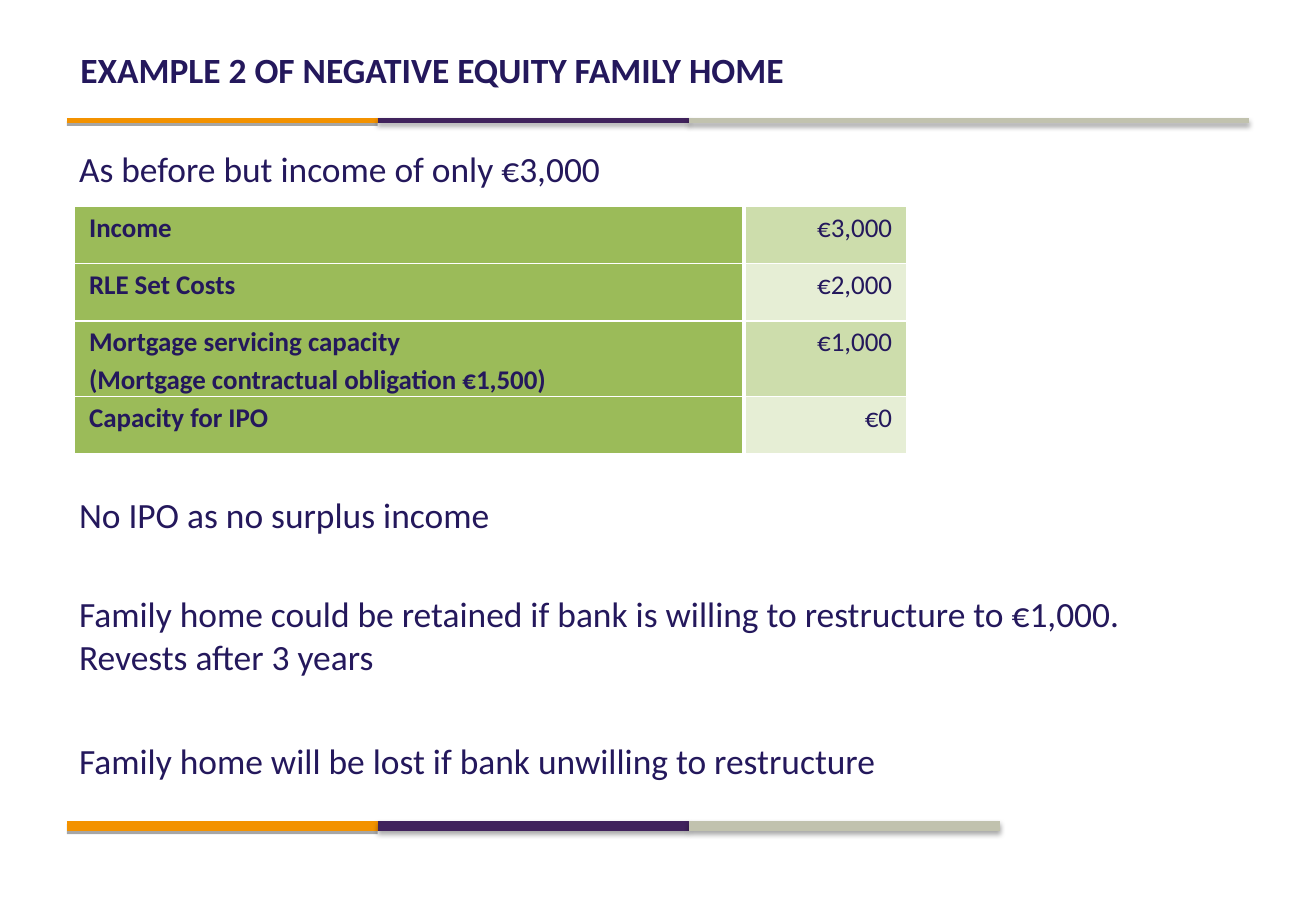
"""Build the slide on the second negative equity family home example."""
from lxml.etree import SubElement
from pptx import Presentation
from pptx.dml.color import RGBColor as Color
from pptx.enum.shapes import MSO_CONNECTOR as Connector
from pptx.enum.text import MSO_ANCHOR as Anchor, MSO_AUTO_SIZE as AutoSize, PP_ALIGN as Align
from pptx.oxml import parse_xml
from pptx.oxml.ns import qn
from pptx.util import Pt

COLORS = {"ink": "24185C", "orange": "F39200", "purple": "40225C", "stone": "C1C2AE",
          "green": "9BBB59", "mid": "CDDDAC", "pale": "E6EED5", "white": "FFFFFF"}
FONT = "Calibri"
TITLE = "EXAMPLE 2 OF NEGATIVE EQUITY FAMILY HOME"
BODY = [
    ("As before but income of only €3,000", 0),
    ("No IPO as no surplus income", 180),
    ("Family home could be retained if bank is willing to restructure to €1,000. "
     "Revests after 3 years", 33.6),
    ("Family home will be lost if bank unwilling to restructure", 36.4),
]
BUDGET = [
    (["Income"], "€3,000"),
    (["RLE Set Costs"], "€2,000"),
    (["Mortgage servicing capacity", "(Mortgage contractual obligation €1,500)"], "€1,000"),
    (["Capacity for IPO"], "€0"),
]
COLUMN_WIDTHS = (396.7, 96.5)
ROW_HEIGHTS = {1: 33.84, 2: 45}
RULE_COLORS = ("orange", "purple", "stone")
RULES = [(71.3, 3, (39.6, 223.9, 408.2, 740.2)),
         (489.6, 6, (39.6, 223.9, 408.2, 592.6))]
INSET = 8.64
A_NS = "http://schemas.openxmlformats.org/drawingml/2006/main"


def write(para, text, size=21, bold=False, align=Align.LEFT, before=0, spacing=None):
    """Put formatted text into a paragraph."""
    props = para._p.get_or_add_pPr()
    props.set("marL", "0")
    props.set("indent", "0")
    SubElement(props, qn("a:buNone"))
    para.alignment = align
    para.space_before = Pt(before)
    if spacing:
        para.line_spacing = spacing
    span = para.add_run()
    span.text = text
    span.font.name = FONT
    span.font.size = Pt(size)
    span.font.bold = bold
    span.font.color.rgb = Color.from_string(COLORS["ink"])


def place(box, left, top, width, height, anchor):
    """Position a placeholder and return its text frame."""
    box.left, box.top, box.width, box.height = map(Pt, (left, top, width, height))
    frame = box.text_frame
    frame.word_wrap = True
    frame.auto_size = AutoSize.NONE
    frame.vertical_anchor = anchor
    frame.margin_left = frame.margin_right = Pt(INSET)
    frame.margin_top = frame.margin_bottom = Pt(INSET / 2)
    return frame


def add_rule(slide, left, right, top, weight, color, blur):
    """Draw one coloured segment with a soft shadow below it."""
    rule = slide.shapes.add_connector(Connector.STRAIGHT, Pt(left), Pt(top), Pt(right), Pt(top))
    rule.line.color.rgb = Color.from_string(COLORS[color])
    rule.line.width = Pt(weight)
    rule._element.spPr.append(parse_xml(
        f'<a:effectLst xmlns:a="{A_NS}"><a:outerShdw blurRad="{Pt(blur)}" dist="{Pt(1.8)}" '
        'dir="5400000" rotWithShape="0"><a:srgbClr val="000000"><a:alpha val="35000"/>'
        '</a:srgbClr></a:outerShdw></a:effectLst>'))


def fill_cell(cell, lines, color, thick_side, **text_format):
    """Write a table cell with white borders and a solid fill."""
    props = cell._tc.get_or_add_tcPr()
    for side in "LRTB":
        weight = 3 if side == thick_side else 1
        border = SubElement(props, qn(f"a:ln{side}"), w=str(Pt(weight)))
        solid = SubElement(border, qn("a:solidFill"))
        SubElement(solid, qn("a:srgbClr"), val=COLORS["white"])
    cell.fill.solid()
    cell.fill.fore_color.rgb = Color.from_string(COLORS[color])
    cell.margin_left = cell.margin_right = Pt(INSET)
    cell.margin_top = cell.margin_bottom = 0
    frame = cell.text_frame
    for index, text in enumerate(lines):
        para = frame.add_paragraph() if index else frame.paragraphs[0]
        write(para, text, size=16, spacing=1.15, **text_format)


def add_budget(slide):
    """Add the income and costs table."""
    heights = [ROW_HEIGHTS[len(labels)] for labels, _ in BUDGET]
    table = slide.shapes.add_table(len(BUDGET), 2, Pt(44.2), Pt(122.5),
                                   Pt(sum(COLUMN_WIDTHS)), Pt(sum(heights))).table
    table.first_row = table.horz_banding = False
    for column, width in zip(table.columns, COLUMN_WIDTHS):
        column.width = Pt(width)
    for index, (labels, amount) in enumerate(BUDGET):
        table.rows[index].height = Pt(heights[index])
        fill_cell(table.cell(index, 0), labels, "green", "R", bold=True)
        fill_cell(table.cell(index, 1), [amount], ("mid", "pale")[index % 2], "L",
                  align=Align.RIGHT)


def main():
    """Assemble and save the deck."""
    deck = Presentation()
    deck.slide_width, deck.slide_height = Pt(780), Pt(540)
    slide = deck.slides.add_slide(deck.slide_layouts[1])
    for top, weight, stops in RULES:
        for index, color in enumerate(RULE_COLORS):
            add_rule(slide, stops[index], stops[index + 1], top, weight, color,
                     3.1 if index else 0)
    title = place(slide.shapes.title, 39, 21.6, 702, 38.9, Anchor.MIDDLE)
    write(title.paragraphs[0], TITLE, bold=True)
    body = place(slide.placeholders[1], 38.2, 82.8, 702, 402.5, Anchor.TOP)
    for index, (text, before) in enumerate(BODY):
        para = body.add_paragraph() if index else body.paragraphs[0]
        write(para, text, before=before)
    add_budget(slide)
    deck.save("out.pptx")


if __name__ == "__main__":
    main()
